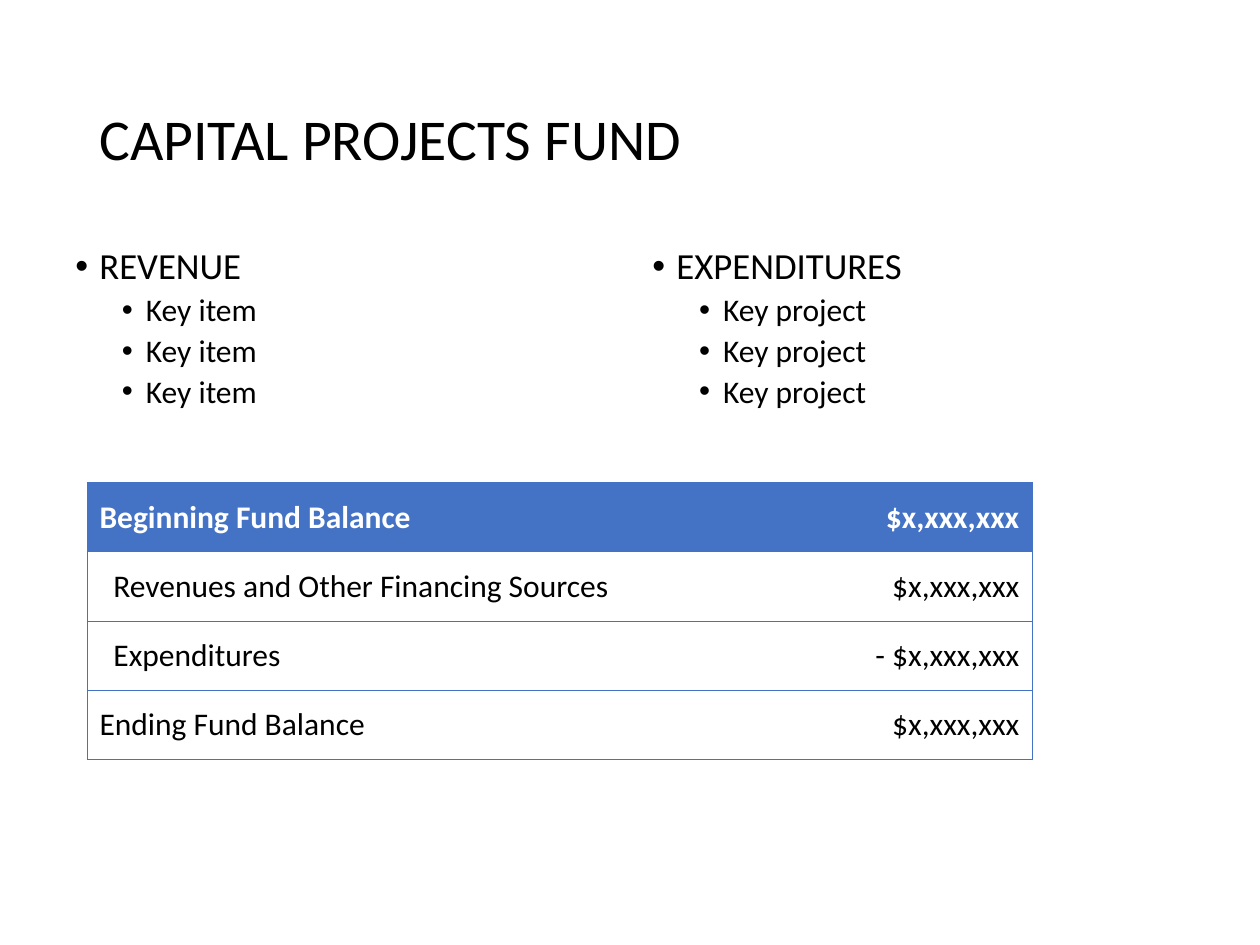
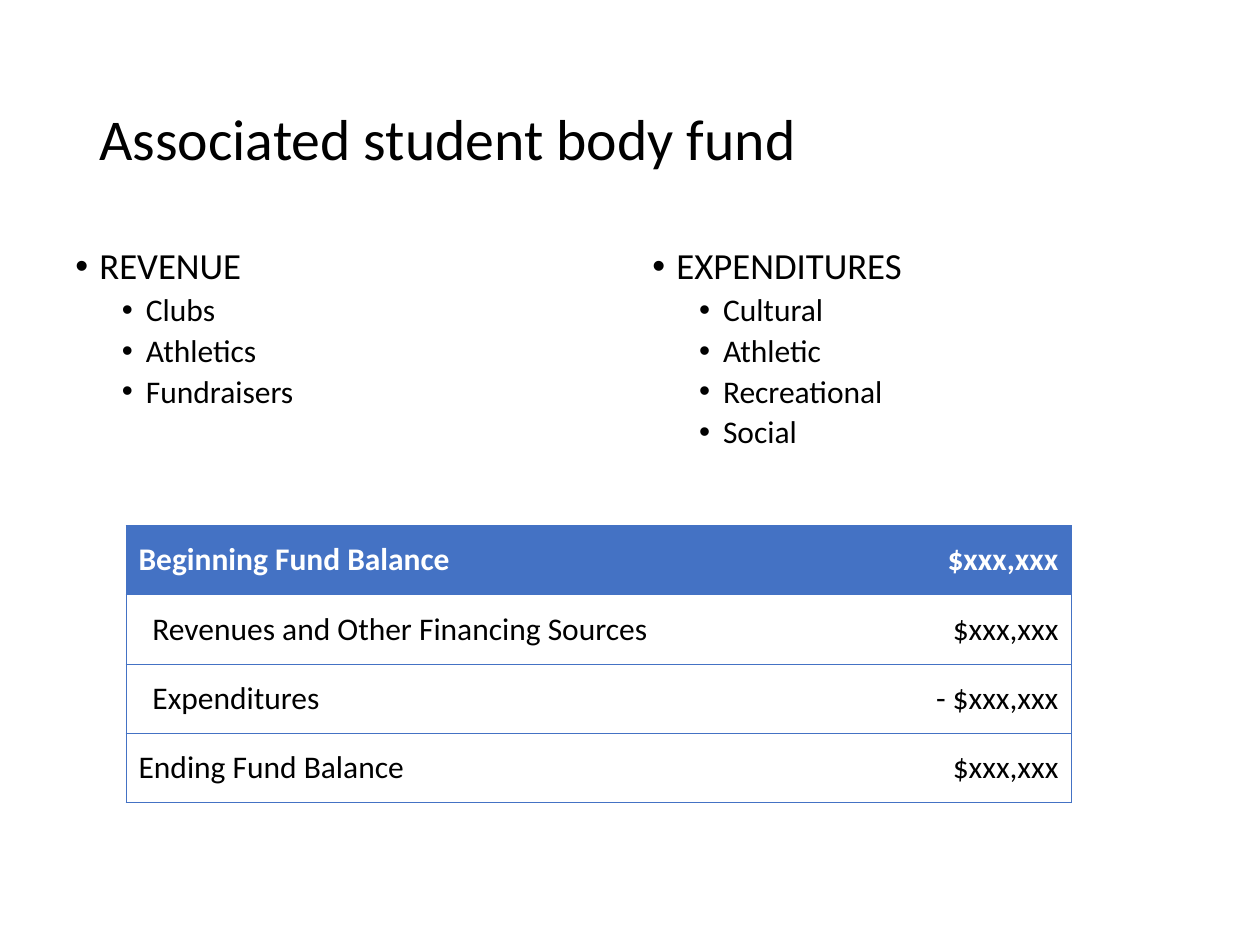
from lxml.etree import SubElement
from pptx import Presentation
from pptx.dml.color import RGBColor
from pptx.enum.text import MSO_ANCHOR as Anchor, PP_ALIGN as Align
from pptx.oxml.ns import qn
from pptx.util import Inches, Pt

BLACK = RGBColor(0x00, 0x00, 0x00)
WHITE = RGBColor(0xFF, 0xFF, 0xFF)
BLUE = RGBColor(0x44, 0x72, 0xC4)

BALANCE_LABELS = [
    ("Beginning Fund Balance", False),
    ("Revenues and Other Financing Sources", True),
    ("Expenditures", True),
    ("Ending Fund Balance", False),
]


class FundDeck:
    font = "Calibri"
    title_size = 33
    heading_size = 21
    text_size = 18
    line_spacing = 0.9
    column_widths = (4.75, 2.75)
    row_height = 0.55

    def __init__(self):
        self.deck = Presentation()
        self.deck.slide_width = Inches(10)
        self.deck.slide_height = Inches(7.5)
        self.page = None

    def new_page(self):
        self.page = self.deck.slides.add_slide(self.deck.slide_layouts[6])

    def add_span(self, para, text, size, color=BLACK, bold=False):
        span = para.add_run()
        span.text = text
        span.font.name = self.font
        span.font.size = Pt(size)
        span.font.color.rgb = color
        span.font.bold = bold

    def text_frame(self, left, top, width, height, anchor):
        box = self.page.shapes.add_textbox(
            Inches(left), Inches(top), Inches(width), Inches(height))
        frame = box.text_frame
        frame.word_wrap = True
        frame.vertical_anchor = anchor
        return frame

    def title(self, text):
        frame = self.text_frame(0.69, 0.4, 8.62, 1.45, Anchor.MIDDLE)
        para = frame.paragraphs[0]
        para.line_spacing = self.line_spacing
        self.add_span(para, text, self.title_size)

    def bullet(self, para, text, level):
        para.level = level
        para.line_spacing = self.line_spacing
        para.space_before = Pt(3.8 if level else 7.5)
        props = para._p.get_or_add_pPr()
        props.set("marL", str(Inches(0.56 if level else 0.19)))
        props.set("indent", str(Inches(-0.19)))
        SubElement(props, qn("a:buFont"), typeface="Arial")
        SubElement(props, qn("a:buChar"), char="•")
        self.add_span(para, text, self.text_size if level else self.heading_size)

    def bullet_list(self, left, heading, items):
        frame = self.text_frame(left, 1.92, 4.42, 2.45, Anchor.TOP)
        self.bullet(frame.paragraphs[0], heading, 0)
        for item in items:
            self.bullet(frame.add_paragraph(), item, 1)

    def borders(self, cell, hidden_side):
        props = cell._tc.get_or_add_tcPr()
        for index, side in enumerate(("lnL", "lnR", "lnT", "lnB")):
            line = SubElement(props, qn(f"a:{side}"), w=str(Pt(0.5)))
            if side == hidden_side:
                SubElement(line, qn("a:noFill"))
            else:
                fill = SubElement(line, qn("a:solidFill"))
                SubElement(fill, qn("a:srgbClr"), val=str(BLUE))
            props.insert(index, line)

    def cell(self, cell, text, column, is_header, indented=False):
        cell.vertical_anchor = Anchor.MIDDLE
        if indented:
            cell.margin_left = Inches(0.21)
        if is_header:
            cell.fill.solid()
            cell.fill.fore_color.rgb = BLUE
        else:
            cell.fill.background()
        self.borders(cell, "lnL" if column else "lnR")
        para = cell.text_frame.paragraphs[0]
        para.alignment = Align.RIGHT if column else Align.LEFT
        self.add_span(para, text, self.text_size,
                      WHITE if is_header else BLACK, is_header)

    def balance_table(self, left, top, amount):
        count = len(BALANCE_LABELS)
        table = self.page.shapes.add_table(
            count, len(self.column_widths), Inches(left), Inches(top),
            Inches(sum(self.column_widths)),
            Inches(count * self.row_height)).table
        table.first_row = False
        table.horz_banding = False
        for column, width in zip(table.columns, self.column_widths):
            column.width = Inches(width)
        for row, (label, indented) in enumerate(BALANCE_LABELS):
            table.rows[row].height = Inches(self.row_height)
            value = f"- {amount}" if label == "Expenditures" else amount
            self.cell(table.cell(row, 0), label, 0, row == 0, indented)
            self.cell(table.cell(row, 1), value, 1, row == 0)

    def fund_page(self, title, revenue, expenditures, table_place, amount):
        self.new_page()
        self.title(title)
        self.bullet_list(0.5, "REVENUE", revenue)
        self.bullet_list(5.08, "EXPENDITURES", expenditures)
        self.balance_table(*table_place, amount)


def main():
    funds = FundDeck()
    funds.fund_page("CAPITAL PROJECTS FUND",
                    ["Key item"] * 3, ["Key project"] * 3,
                    (0.69, 3.83), "$x,xxx,xxx")
    funds.fund_page("Associated student body fund",
                    ["Clubs", "Athletics", "Fundraisers"],
                    ["Cultural", "Athletic", "Recreational", "Social"],
                    (1, 4.17), "$xxx,xxx")
    funds.deck.save("out.pptx")


if __name__ == "__main__":
    main()
